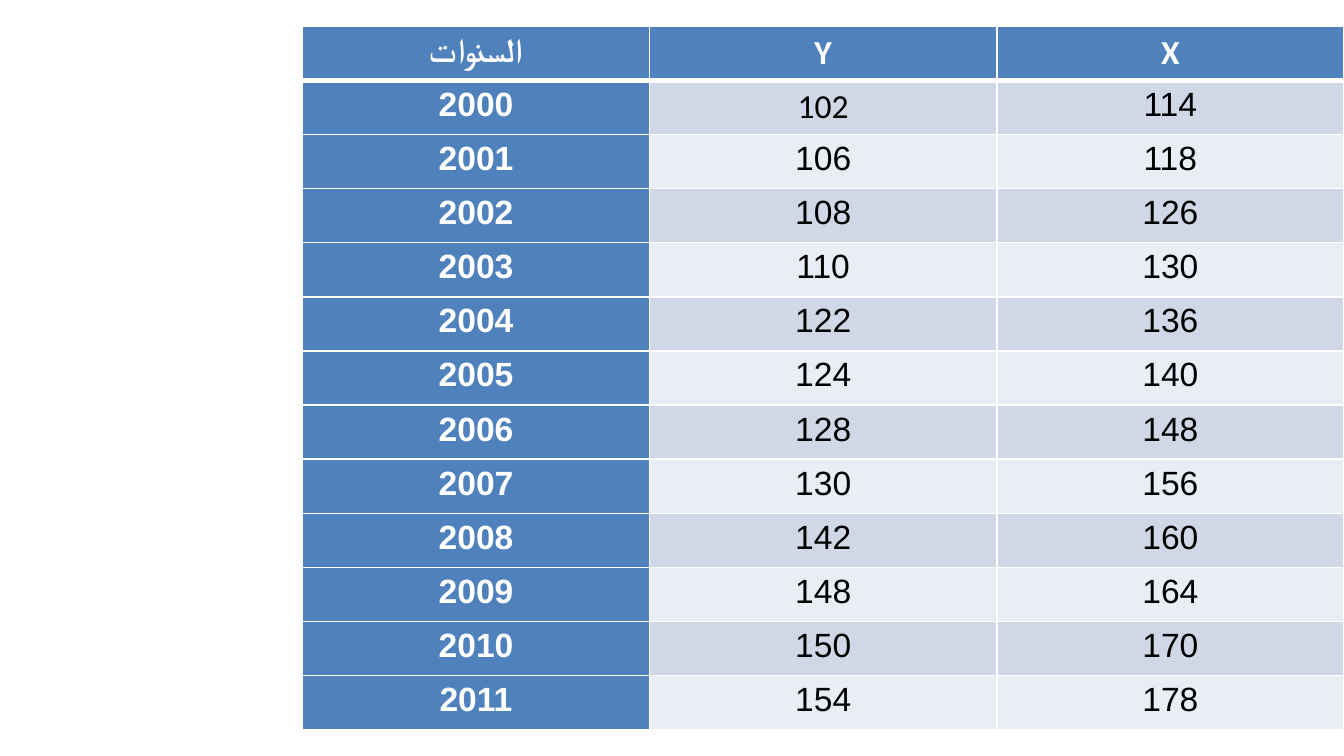
from lxml.etree import SubElement
from pptx import Presentation
from pptx.dml.color import RGBColor
from pptx.enum.text import PP_ALIGN
from pptx.oxml import parse_xml
from pptx.oxml.ns import nsdecls, qn
from pptx.util import Pt

WHITE, BLACK, BLUE = "FFFFFF", "000000", "4F81BD"
BANDS = ("D0D8E8", "E9EDF4")
HEADER = ("السنوات", "Y", "X")
Y_VALUES = (102, 106, 108, 110, 122, 124, 128, 130, 142, 148, 150, 154)
X_VALUES = (114, 118, 126, 130, 136, 140, 148, 156, 160, 164, 170, 178)
ROWS = [HEADER, *zip(range(2000, 2012), Y_VALUES, X_VALUES)]


def rgb(value):
    """Return the colour for a hex string."""
    return RGBColor.from_string(value)


def set_text(tf, text, color=BLACK, bold=False, rtl=False, size=18):
    """Write one centred paragraph into a text frame."""
    p = tf.paragraphs[0]
    p.alignment = PP_ALIGN.CENTER
    p.line_spacing = 1.15
    p.space_after = Pt(10)
    if rtl:
        p._p.get_or_add_pPr().set("rtl", "1")
    r = p.add_run()
    r.text = str(text)
    r.font.size = Pt(size)
    r.font.bold = bold
    r.font.color.rgb = rgb(color)
    r.font.name = "Calibri"
    SubElement(r._r.get_or_add_rPr(), qn("a:cs")).set("typeface", "Arial")


def set_borders(cell, top=1, bottom=1):
    """Draw white lines on the four sides of a cell."""
    tc_pr = cell._tc.get_or_add_tcPr()
    for i, (side, width) in enumerate(zip("LRTB", (1, 1, top, bottom))):
        tc_pr.insert(i, parse_xml(
            f'<a:ln{side} {nsdecls("a")} w="{Pt(width)}"><a:solidFill>'
            f'<a:srgbClr val="{WHITE}"/></a:solidFill></a:ln{side}>'))


def format_cell(cell, fill):
    """Set the margins and fill of a cell."""
    cell.margin_left = cell.margin_right = Pt(5)
    cell.margin_top = cell.margin_bottom = Pt(0)
    cell.fill.solid()
    cell.fill.fore_color.rgb = rgb(fill)


def add_data_table(s, left, top, width, height):
    """Place the table of yearly values in the given box."""
    n_rows, n_cols = len(ROWS), len(HEADER)
    table = s.shapes.add_table(n_rows, n_cols, Pt(left), Pt(top),
                               Pt(width), Pt(height)).table
    table.horz_banding = False
    for col in table.columns:
        col.width = Pt(width / n_cols)
    for i, values in enumerate(ROWS):
        table.rows[i].height = Pt(height / n_rows)
        for j, value in enumerate(values):
            cell = table.cell(i, j)
            heading = i == 0 or j == 0
            format_cell(cell, BLUE if heading else BANDS[(i - 1) % 2])
            set_borders(cell, top=3 if i == 1 else 1, bottom=3 if i == 0 else 1)
            set_text(cell.text_frame, value, color=WHITE if heading else BLACK,
                     bold=heading, rtl=i > 0 and (i, j) != (1, 1))


def main():
    """Build the slide and save it."""
    prs = Presentation()
    prs.slide_width, prs.slide_height = Pt(720), Pt(405)
    s = prs.slides.add_slide(prs.slide_layouts[6])
    add_data_table(s, 162, 14, 558, 377)
    prs.save("out.pptx")


if __name__ == "__main__":
    main()
